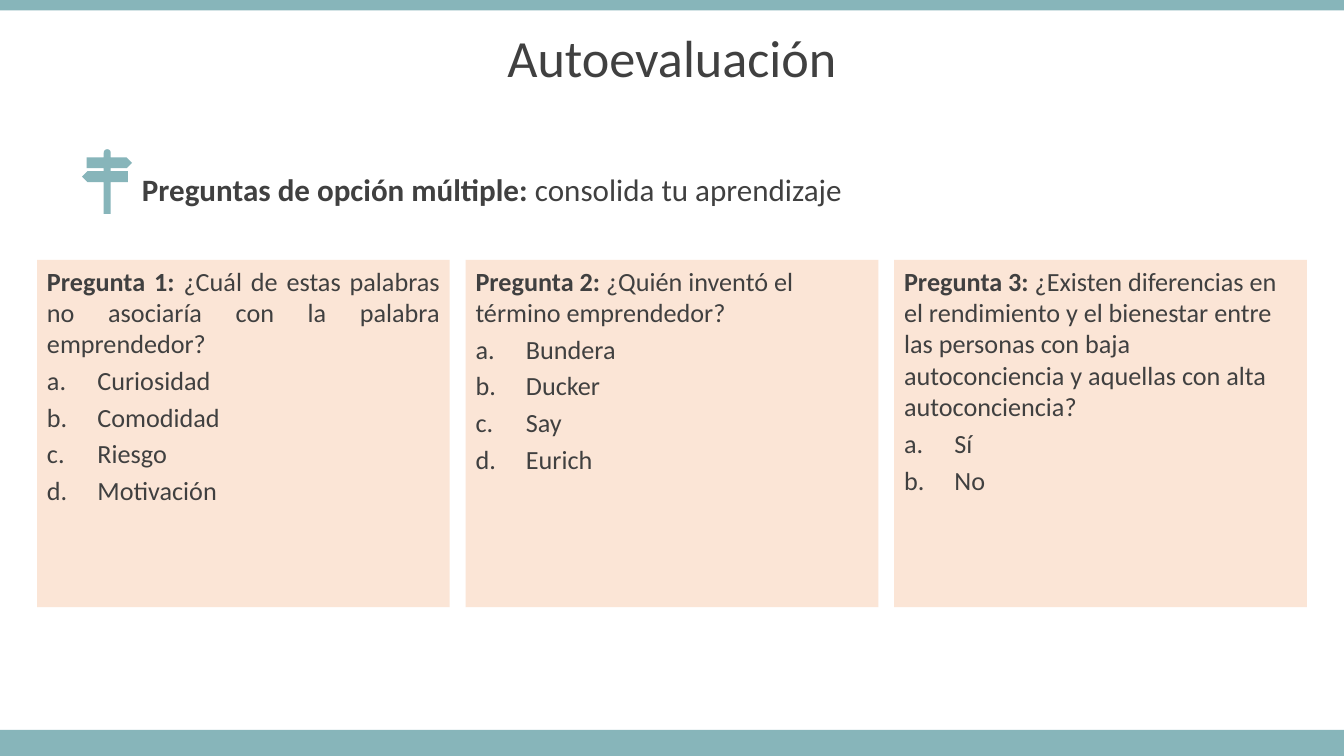
from math import cos, sin, pi
from lxml.etree import SubElement
from pptx import Presentation
from pptx.dml.color import RGBColor as RGB
from pptx.enum.shapes import MSO_SHAPE as Shape
from pptx.enum.text import MSO_ANCHOR as Anchor, PP_ALIGN as Align
from pptx.oxml.ns import qn
from pptx.util import Pt

hues = {"teal": "87B5BA", "peach": "FBE5D6", "ink": "404040"}

deck = Presentation()
deck.slide_width, deck.slide_height = Pt(960), Pt(540)
slide = deck.slides.add_slide(deck.slide_layouts[6])
shapes = slide.shapes


def paint(shape, hue):
    shape.shadow.inherit = False
    shape.fill.solid()
    shape.fill.fore_color.rgb = RGB.from_string(hues[hue])
    shape.line.fill.background()


def write(para, text, size, bold=False):
    run = para.add_run()
    run.text = text
    run.font.name = "Calibri"
    run.font.size = Pt(size)
    run.font.bold = bold
    run.font.color.rgb = RGB.from_string(hues["ink"])


for top, high in [(521.3, 18.7), (0, 7.5)]:
    band = shapes.add_shape(Shape.RECTANGLE, 0, Pt(top), Pt(960), Pt(high))
    paint(band, "teal")

heads = [
    (0, 13, 960, 60.5, Align.CENTER, 0.9, 37.3, [("Autoevaluación", False)]),
    (94.3, 123, 642, 29.5, Align.LEFT, 0.8, 22.2,
     [("Preguntas de opción múltiple: ", True), ("consolida tu aprendizaje", False)]),
]
for left, top, wide, high, align, space, size, parts in heads:
    box = shapes.add_textbox(Pt(left), Pt(top), Pt(wide), Pt(high))
    frame = box.text_frame
    frame.word_wrap = True
    frame.vertical_anchor = Anchor.MIDDLE
    para = frame.paragraphs[0]
    para.alignment = align
    para.line_spacing = space
    for text, bold in parts:
        write(para, text, size, bold)

mid, cap, bend = 76.6, 109.1, 2.5
arc = [(mid - bend * cos(pi * i / 12), cap - bend * sin(pi * i / 12)) for i in range(13)]
right = [(79.1, 112.5), (90.5, 112.5), (94.3, 116.3), (90.5, 120.1), (79.1, 120.1),
         (79.1, 122.3), (91.4, 122.3), (91.4, 130.1), (79.1, 130.1), (79.1, 152.8)]
left = [(74.1, 152.8), (74.1, 130.1), (62.5, 130.1), (58.5, 126.2), (62.5, 122.3),
        (74.1, 122.3), (74.1, 120.1), (61.8, 120.1), (61.8, 112.5), (74.1, 112.5)]
edge = [(Pt(x), Pt(y)) for x, y in arc + right + left]
pen = shapes.build_freeform(*edge[0])
pen.add_line_segments(edge[1:], close=True)
paint(pen.convert_to_shape(), "teal")

cards = [
    ("¿Cuál de estas palabras no asociaría con la palabra emprendedor?", Align.JUSTIFY,
     ["Curiosidad", "Comodidad", "Riesgo", "Motivación"]),
    ("¿Quién inventó el término emprendedor?", Align.LEFT,
     ["Bundera", "Ducker", "Say", "Eurich"]),
    ("¿Existen diferencias en el rendimiento y el bienestar entre las personas con baja "
     "autoconciencia y aquellas con alta autoconciencia?", Align.LEFT, ["Sí", "No"]),
]
for i, (query, align, picks) in enumerate(cards):
    card = shapes.add_shape(Shape.RECTANGLE, Pt(26.5 + 306.1 * i), Pt(185.7), Pt(294.8), Pt(248))
    paint(card, "peach")
    frame = card.text_frame
    frame.word_wrap = True
    frame.vertical_anchor = Anchor.TOP
    para = frame.paragraphs[0]
    para.alignment = align
    write(para, f"Pregunta {i + 1}: ", 18.7, True)
    write(para, query, 18.7)
    for pick in picks:
        para = frame.add_paragraph()
        para.alignment = Align.LEFT
        para.space_before = Pt(3.74)
        props = para._p.get_or_add_pPr()
        props.set("marL", str(Pt(36)))
        props.set("indent", str(Pt(-36)))
        SubElement(props, qn("a:buFont"), typeface="+mj-lt")
        SubElement(props, qn("a:buAutoNum"), type="alphaLcPeriod")
        write(para, pick, 18.7)

deck.save("out.pptx")
